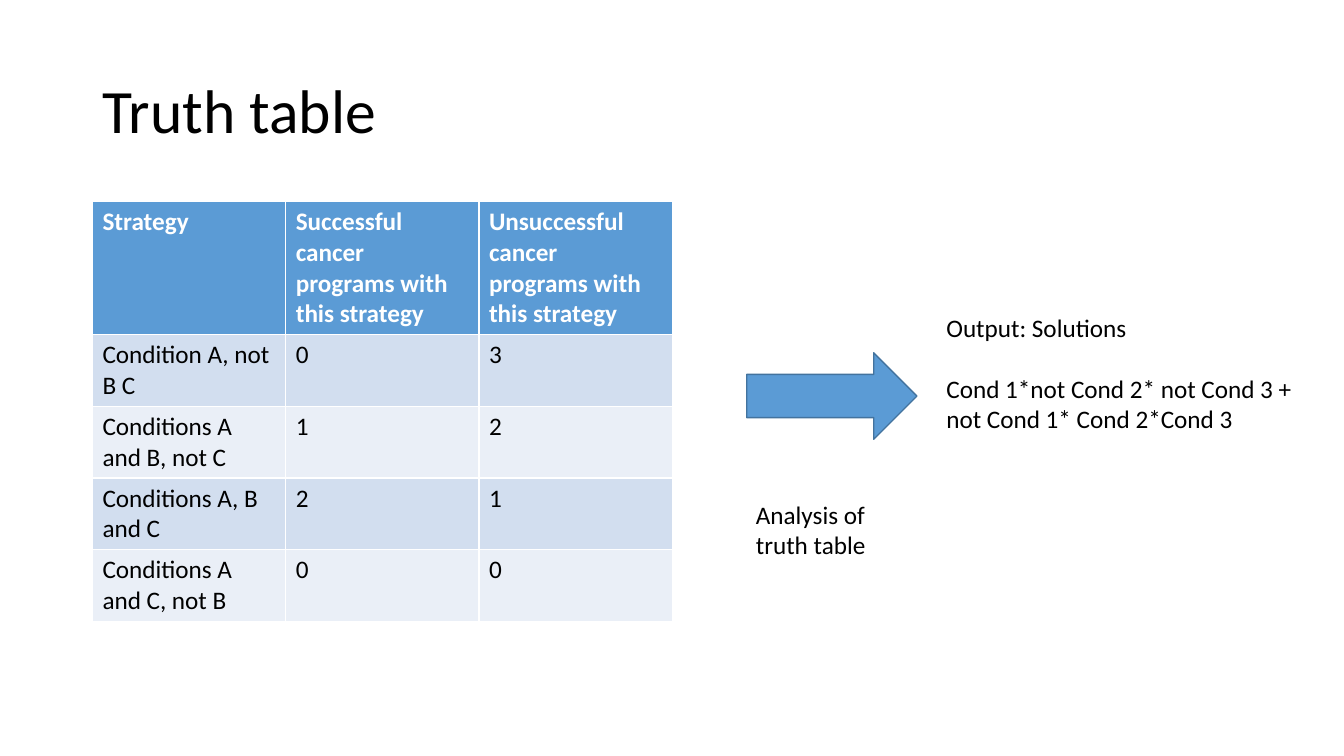
import dataclasses

import pptx
import pptx.dml.color
import pptx.enum.shapes
import pptx.enum.text
import pptx.util
from pptx.util import Cm, Pt

FONT = "Calibri"
BLACK, WHITE, BLUE, DARK_BLUE = "000000", "FFFFFF", "5B9BD5", "43739E"
BANDS = ("D2DEEF", "EAEFF7")
ROWS = (
    ("Strategy", "Successful cancer programs with this strategy",
     "Unsuccessful cancer programs with this strategy"),
    ("Condition A, not B C", "0", "3"),
    ("Conditions A and B, not C", "1", "2"),
    ("Conditions A, B and C", "2", "1"),
    ("Conditions A and C, not B", "0", "0"),
)


@dataclasses.dataclass
class Label:
    left: float
    top: float
    width: float
    height: float
    paragraphs: tuple[str, ...]


LABELS = (
    Label(18.8, 12.45, 4.22, 1.8, ("Analysis of truth table",)),
    Label(23.6, 7.75, 9.73, 3.33, (
        "Output: Solutions",
        "Cond 1*not Cond 2* not Cond 3 + not Cond 1* Cond 2*Cond 3")),
)


def rgb(value: str) -> pptx.dml.color.RGBColor:
    return pptx.dml.color.RGBColor.from_string(value)


def set_font(p, size: float, color: str = BLACK, bold: bool = False) -> None:
    p.font.name = FONT
    p.font.size = Pt(size)
    p.font.bold = bold
    p.font.color.rgb = rgb(color)


def add_label(s, label: Label) -> None:
    box = s.shapes.add_textbox(Cm(label.left), Cm(label.top),
                               Cm(label.width), Cm(label.height))
    tf = box.text_frame
    tf.word_wrap = True
    tf.auto_size = pptx.enum.text.MSO_AUTO_SIZE.SHAPE_TO_FIT_TEXT
    tf.text = "\n".join(label.paragraphs)
    for i, p in enumerate(tf.paragraphs):
        set_font(p, 18)
        if i:
            p.space_before = Pt(22)


def add_truth_table(s) -> None:
    row_height = Cm(1.03)
    table = s.shapes.add_table(len(ROWS), len(ROWS[0]), Cm(2.33), Cm(5.08),
                               Cm(14.61), row_height * len(ROWS)).table
    for i, row in enumerate(ROWS):
        header = i == 0
        for j, text in enumerate(row):
            cell = table.cell(i, j)
            cell.text = text
            cell.fill.solid()
            cell.fill.fore_color.rgb = rgb(BLUE if header else BANDS[(i - 1) % 2])
            set_font(cell.text_frame.paragraphs[0], 18,
                     WHITE if header else BLACK, header)


def add_arrow(s) -> None:
    sp = s.shapes.add_shape(pptx.enum.shapes.MSO_SHAPE.RIGHT_ARROW,
                            Cm(18.82), Cm(8.89), Cm(4.29), Cm(2.18))
    sp.shadow.inherit = False
    sp.fill.solid()
    sp.fill.fore_color.rgb = rgb(BLUE)
    sp.line.color.rgb = rgb(DARK_BLUE)
    sp.line.width = Pt(1)


def add_title(s) -> None:
    title = s.shapes.title
    title.left, title.top = Cm(2.33), Cm(1.01)
    title.width, title.height = Cm(29.21), Cm(3.68)
    tf = title.text_frame
    tf.text = "Truth table"
    tf.vertical_anchor = pptx.enum.text.MSO_ANCHOR.MIDDLE
    p = tf.paragraphs[0]
    p.alignment = pptx.enum.text.PP_ALIGN.LEFT
    p.line_spacing = 0.9
    set_font(p, 44)


def main() -> None:
    prs = pptx.Presentation()
    prs.slide_width, prs.slide_height = Cm(33.87), Cm(19.05)
    s = prs.slides.add_slide(prs.slide_layouts[5])

    # Title and table
    add_title(s)
    add_truth_table(s)

    # Analysis step and its output
    add_arrow(s)
    for label in LABELS:
        add_label(s, label)

    prs.save("out.pptx")


if __name__ == "__main__":
    main()
